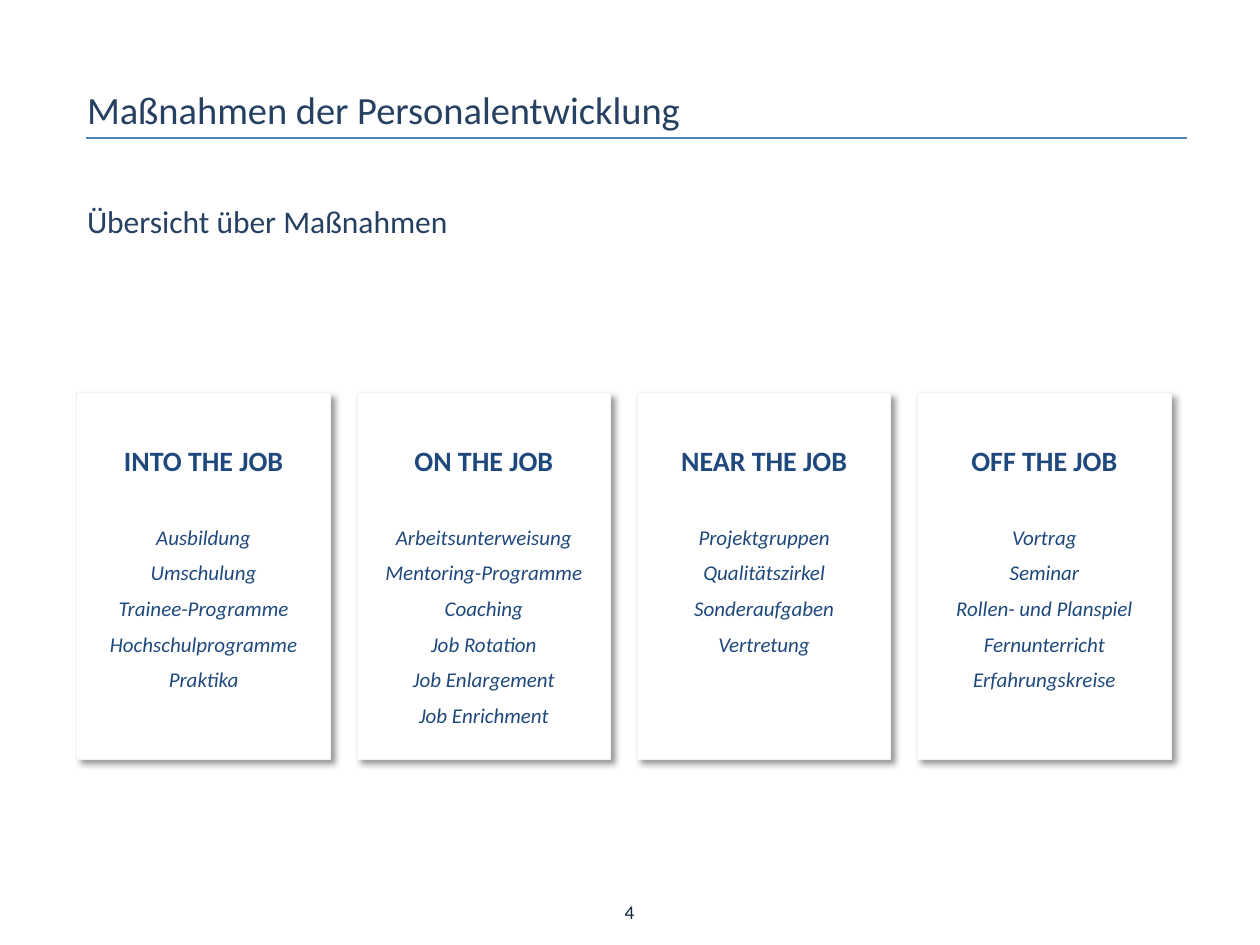
import pptx
import pptx.dml.color
import pptx.enum.shapes
import pptx.enum.text
import pptx.oxml
import pptx.oxml.ns
import pptx.util

Cm = pptx.util.Cm
Pt = pptx.util.Pt
Align = pptx.enum.text.PP_ALIGN
Anchor = pptx.enum.text.MSO_ANCHOR

HUES = {"title": "254061", "page": "10253F", "card": "1F497D",
        "rule": "4F81BD", "edge": "F2F2F2", "paper": "FFFFFF", "shade": "000000"}

FONTS = {
    "title": {"size": Pt(22), "bold": False},
    "body": {"size": Pt(18), "bold": False},
    "page": {"size": Pt(11)},
    "head": {"size": Pt(16), "bold": True},
    "item": {"size": Pt(12), "italic": True},
}

CARDS = [
    ("INTO THE JOB", ["Ausbildung", "Umschulung", "Trainee-Programme",
                      "Hochschulprogramme", "Praktika"]),
    ("ON THE JOB", ["Arbeitsunterweisung", "Mentoring-Programme", "Coaching",
                    "Job Rotation", "Job Enlargement", "Job Enrichment"]),
    ("NEAR THE JOB", ["Projektgruppen", "Qualitätszirkel", "Sonderaufgaben",
                      "Vertretung"]),
    ("OFF THE JOB", ["Vortrag", "Seminar", "Rollen- und Planspiel",
                     "Fernunterricht", "Erfahrungskreise"]),
]

SHADOW = """<a:effectLst {ns}><a:outerShdw blurRad="50800" dist="38100" dir="2700000"
 algn="tl" rotWithShape="0"><a:srgbClr val="{hue}"><a:alpha val="40000"/></a:srgbClr>
</a:outerShdw></a:effectLst>"""


def assign(thing, values):
    for name, value in values.items():
        setattr(thing, name, value)


def color(name):
    return pptx.dml.color.RGBColor.from_string(HUES[name])


def place(shape, left, top, width, height):
    assign(shape, {"left": Cm(left), "top": Cm(top),
                   "width": Cm(width), "height": Cm(height)})


def write(para, text, style, hue, **form):
    run = para.add_run()
    run.text = text
    assign(run.font, {"name": "Calibri", **FONTS[style]})
    run.font.color.rgb = color(hue)
    assign(para, form)


def fill_holder(shape, text, style, anchor, *box):
    place(shape, *box)
    frame = shape.text_frame
    assign(frame, {"word_wrap": True, "vertical_anchor": anchor,
                   "auto_size": pptx.enum.text.MSO_AUTO_SIZE.NONE})
    para = frame.paragraphs[0]
    write(para, text, style, "title", alignment=Align.LEFT, space_before=Pt(0))
    props = para._p.get_or_add_pPr()
    assign(props, {"marL": 0, "indent": 0})
    props.set("marL", "0")
    props.set("indent", "0")
    props.append(pptx.oxml.parse_xml(
        f"<a:buNone {pptx.oxml.ns.nsdecls('a')}/>"))


def add_rule(slide):
    line = slide.shapes.add_connector(
        pptx.enum.shapes.MSO_CONNECTOR.STRAIGHT,
        Cm(1.73), Cm(2.79), Cm(23.93), Cm(2.79))
    line.line.color.rgb = color("rule")
    line.line.width = Pt(1.25)
    line._element.spPr.append(pptx.oxml.parse_xml(
        f"<a:effectLst {pptx.oxml.ns.nsdecls('a')}/>"))


def add_page(slide, text):
    box = slide.shapes.add_textbox(Cm(11.99), Cm(18.03), Cm(1.4), Cm(0.74))
    box.text_frame.word_wrap = True
    write(box.text_frame.paragraphs[0], text, "page", "page", alignment=Align.CENTER)


def add_card(slide, left, head, items):
    card = slide.shapes.add_shape(
        pptx.enum.shapes.MSO_SHAPE.RECTANGLE, Cm(left), Cm(7.92), Cm(5.11), Cm(7.39))
    card.fill.solid()
    card.fill.fore_color.rgb = color("paper")
    card.line.color.rgb = color("edge")
    card.line.width = Pt(0.5)
    card._element.spPr.append(pptx.oxml.parse_xml(
        SHADOW.format(ns=pptx.oxml.ns.nsdecls("a"), hue=HUES["shade"])))
    frame = card.text_frame
    assign(frame, {"word_wrap": True, "vertical_anchor": Anchor.TOP,
                   "margin_top": Cm(1.03)})
    write(frame.paragraphs[0], head, "head", "card",
          alignment=Align.CENTER, space_after=Pt(26.6))
    for item in items:
        write(frame.add_paragraph(), item, "item", "card",
              alignment=Align.CENTER, space_after=Pt(6))


def main():
    deck = pptx.Presentation()
    assign(deck, {"slide_width": Cm(25.4), "slide_height": Cm(19.05)})
    slide = deck.slides.add_slide(deck.slide_layouts[1])
    add_rule(slide)
    add_page(slide, "4")
    fill_holder(slide.shapes.title, "Maßnahmen der Personalentwicklung",
                "title", Anchor.MIDDLE, 1.5, 1.6, 22.61, 1.19)
    fill_holder(slide.placeholders[1], "Übersicht über Maßnahmen",
                "body", Anchor.TOP, 1.5, 3.94, 23.39, 4.11)
    for index, (head, items) in enumerate(CARDS):
        add_card(slide, 1.55 + 5.65 * index, head, items)
    deck.save("out.pptx")


if __name__ == "__main__":
    main()
